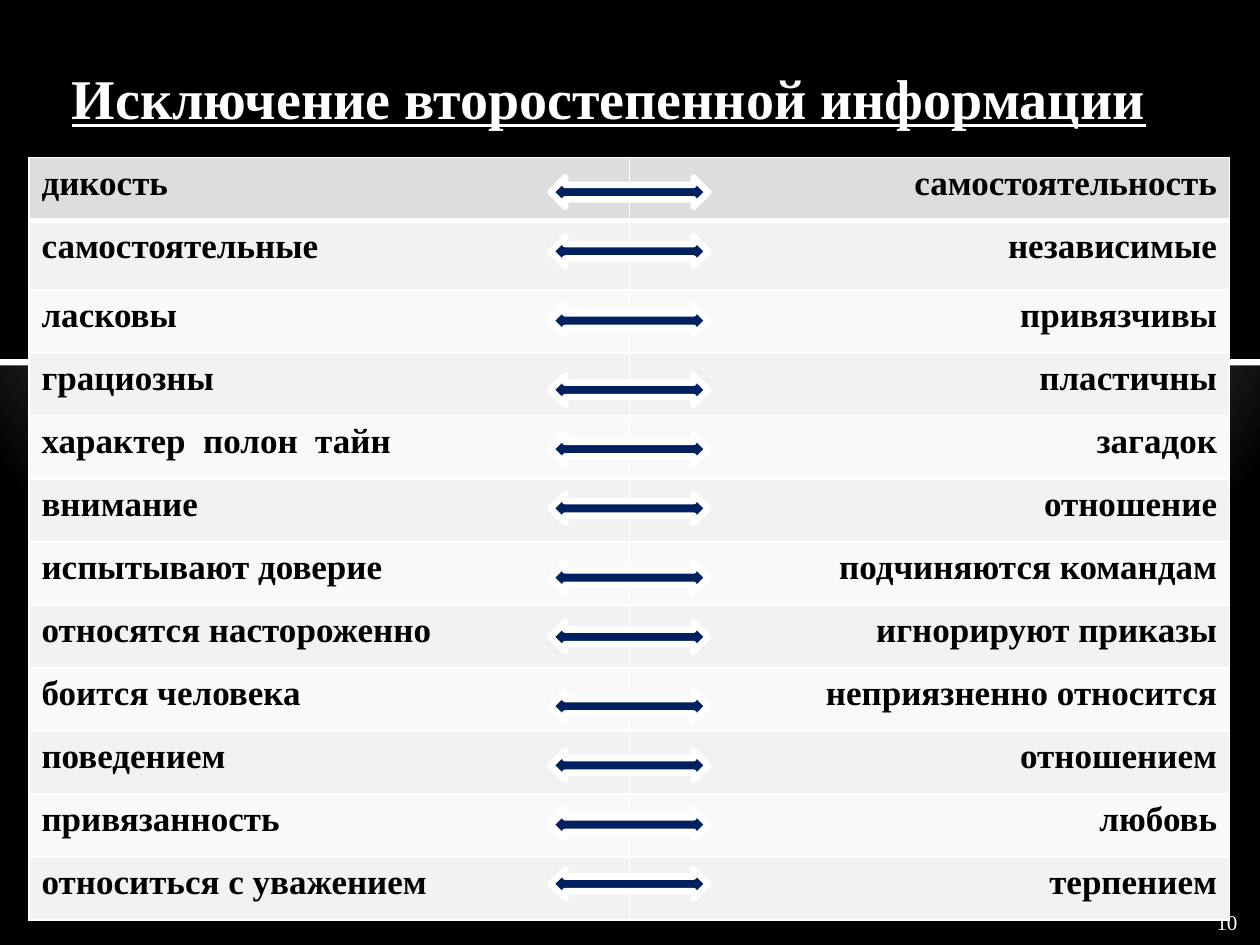
from dataclasses import dataclass

from pptx import Presentation
from pptx.dml.color import RGBColor
from pptx.enum.shapes import MSO_SHAPE
from pptx.enum.text import MSO_ANCHOR, MSO_AUTO_SIZE, PP_ALIGN
from pptx.oxml import parse_xml
from pptx.oxml.ns import nsdecls
from pptx.util import Inches, Pt


@dataclass(frozen=True)
class Theme:
    font: str = "Times New Roman"
    black: str = "000000"
    white: str = "FFFFFF"
    arrow: str = "002060"
    header: str = "DDDDDD"
    bands: tuple = ("F9F9F9", "F2F2F2")
    glow: tuple = ((0, "C0C0C0"), (12, "C0C0C0"), (20, "BEBEBE"), (100, "000000"))
    title_size: int = 32
    table_size: int = 20
    number_size: int = 12


THEME = Theme()
WIDTH, HEIGHT = 10, 7.5
WORD_PAIRS = [
    ("дикость", "самостоятельность"),
    ("самостоятельные", "независимые"),
    ("ласковы", "привязчивы"),
    ("грациозны", "пластичны"),
    ("характер  полон  тайн", "загадок"),
    ("внимание", "отношение"),
    ("испытывают доверие", "подчиняются командам"),
    ("относятся настороженно", "игнорируют приказы"),
    ("боится человека", "неприязненно относится"),
    ("поведением", "отношением"),
    ("привязанность", "любовь"),
    ("относиться с уважением", "терпением"),
]
ROW_HEIGHTS = [0.5, 0.55] + [0.5] * 10
# Arrows are set by hand: a narrow or a wide step after each one
NARROW, WIDE = 0.47, 0.55
ARROW_STEPS = [NARROW, WIDE, WIDE, NARROW, NARROW, WIDE,
               NARROW, WIDE, NARROW, NARROW, NARROW]


def color(code):
    return RGBColor.from_string(code)


def place(part, box):
    part.left, part.top, part.width, part.height = map(Inches, box)


def style_text(paragraph, size, code, bold=False, align=PP_ALIGN.LEFT):
    paragraph.alignment = align
    font = paragraph.font
    font.name, font.size, font.bold = THEME.font, Pt(size), bold
    font.color.rgb = color(code)


def add_block(slide, preset, box, fill, outline=None, outline_width=0):
    block = slide.shapes.add_shape(preset, *map(Inches, box))
    block.shadow.inherit = False
    block.fill.solid()
    block.fill.fore_color.rgb = color(fill)
    if outline:
        block.line.color.rgb = color(outline)
        block.line.width = Pt(outline_width)
    else:
        block.line.fill.background()


def add_backdrop(slide, box):
    left, top, width, height = box
    # Radial glow
    stops = "".join(f'<a:gs pos="{share * 1000}"><a:srgbClr val="{code}"/></a:gs>'
                    for share, code in THEME.glow)
    slide.element.cSld.insert(0, parse_xml(
        f'<p:bg {nsdecls("p", "a")}><p:bgPr><a:gradFill rotWithShape="1">'
        f'<a:gsLst>{stops}</a:gsLst><a:path path="circle">'
        '<a:fillToRect l="10000" t="-25000" r="10000" b="125000"/></a:path>'
        '</a:gradFill><a:effectLst/></p:bgPr></p:bg>'))
    # Dark upper band and its white edge
    band = 0.38 * height
    add_block(slide, MSO_SHAPE.RECTANGLE, (left, top, width, band), THEME.black)
    add_block(slide, MSO_SHAPE.RECTANGLE, (left, top + band, width, 0.05), THEME.white)


def add_title(slide, box):
    title = slide.shapes.title
    place(title, box)
    frame = title.text_frame
    frame.text = "Исключение второстепенной информации"
    frame.auto_size = MSO_AUTO_SIZE.NONE
    frame.vertical_anchor = MSO_ANCHOR.BOTTOM
    frame.margin_top, frame.margin_bottom = 0, Inches(0.51)
    heading = frame.paragraphs[0]
    style_text(heading, THEME.title_size, THEME.white, bold=True)
    heading.font.underline = True
    # Bring the title in front of the backdrop
    slide.shapes.element.append(title.element)


def add_slide_number(slide, box):
    number = slide.shapes.add_textbox(*map(Inches, box))
    frame = number.text_frame
    frame.word_wrap = True
    frame.vertical_anchor = MSO_ANCHOR.BOTTOM
    frame.margin_bottom = 0
    frame.text = "10"
    style_text(frame.paragraphs[0], THEME.number_size, THEME.white, align=PP_ALIGN.RIGHT)


def set_borders(cell, widths):
    properties = cell._tc.get_or_add_tcPr()
    for position, (side, width) in enumerate(widths.items()):
        properties.insert(position, parse_xml(
            f'<a:{side} {nsdecls("a")} w="{Pt(width)}"><a:solidFill>'
            f'<a:srgbClr val="{THEME.white}"/></a:solidFill></a:{side}>'))


def add_word_table(slide, box):
    table = slide.shapes.add_table(len(WORD_PAIRS), 2, *map(Inches, box)).table
    for column in table.columns:
        column.width = Inches(box[2] / 2)
    for row, (pair, height) in enumerate(zip(WORD_PAIRS, ROW_HEIGHTS)):
        table.rows[row].height = Inches(height)
        for side, word in enumerate(pair):
            cell = table.cell(row, side)
            cell.text = word
            style_text(cell.text_frame.paragraphs[0], THEME.table_size, THEME.black,
                       bold=True, align=PP_ALIGN.RIGHT if side else PP_ALIGN.LEFT)
            cell.fill.solid()
            cell.fill.fore_color.rgb = color(THEME.bands[row % 2] if row else THEME.header)
            set_borders(cell, {"lnL": 1, "lnR": 1, "lnT": 3 if row == 1 else 1,
                               "lnB": 1 if row else 3})


def add_arrows(slide, box):
    left, top, width, height = box
    for step in ARROW_STEPS + [0]:
        add_block(slide, MSO_SHAPE.LEFT_RIGHT_ARROW, (left, top, width, height),
                  THEME.arrow, THEME.white, 3.78)
        top += step


def main():
    deck = Presentation()
    deck.slide_width, deck.slide_height = Inches(WIDTH), Inches(HEIGHT)
    slide = deck.slides.add_slide(deck.slide_layouts[5])
    add_backdrop(slide, (0, 0, WIDTH, HEIGHT))
    add_title(slide, (0.47, 0.3, 9.3, 1.25))
    add_slide_number(slide, (9.42, 6.9, 0.5, 0.52))
    add_word_table(slide, (0.23, 1.25, 9.53, sum(ROW_HEIGHTS)))
    add_arrows(slide, (4.37, 1.41, 1.25, 0.23))
    deck.save("out.pptx")


if __name__ == "__main__":
    main()
